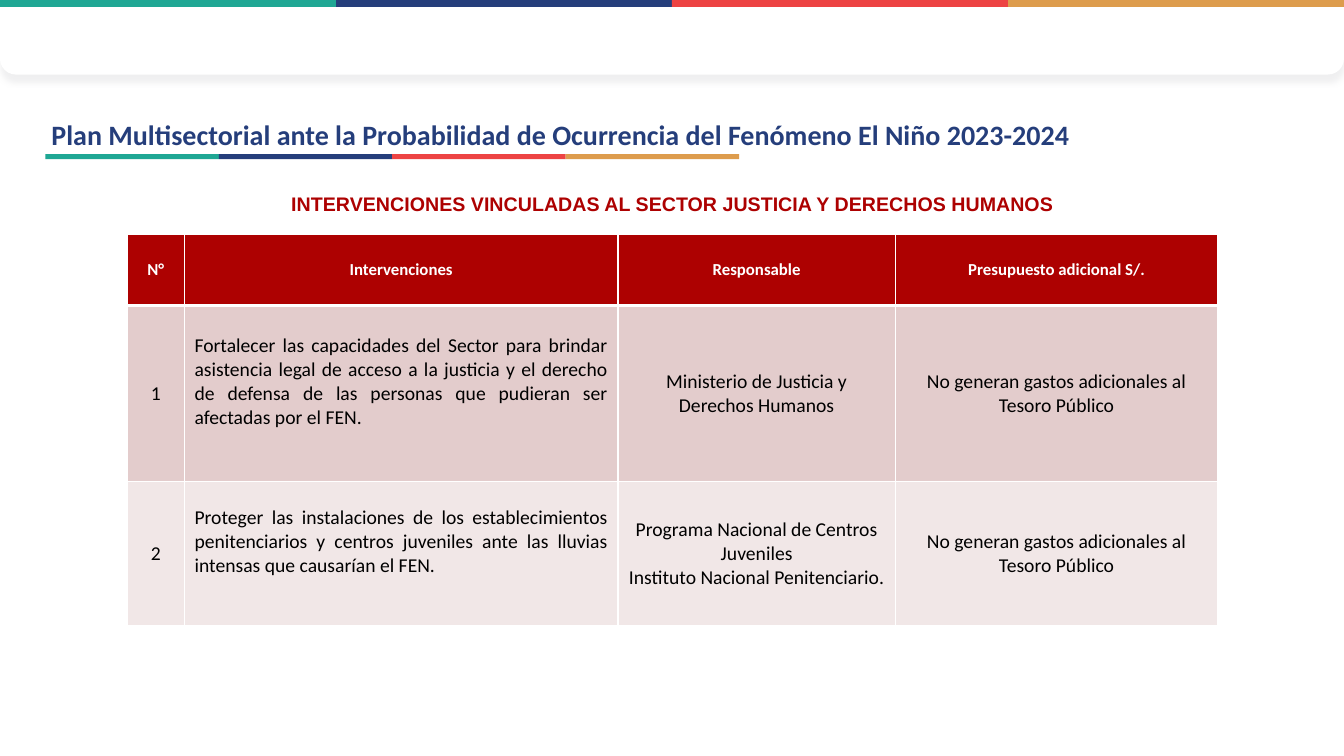
import pptx
import pptx.util
import pptx.dml.color
import pptx.enum.shapes
import pptx.enum.text
import pptx.oxml
import pptx.oxml.ns

Inches, Pt = pptx.util.Inches, pptx.util.Pt
RECT = pptx.enum.shapes.MSO_SHAPE.RECTANGLE
CARD = pptx.enum.shapes.MSO_SHAPE.ROUND_2_SAME_RECTANGLE
ALIGN = pptx.enum.text.PP_ALIGN
MIDDLE = pptx.enum.text.MSO_ANCHOR.MIDDLE

TITLE = "Plan Multisectorial ante la Probabilidad de Ocurrencia del Fenómeno El Niño 2023-2024"
SUBTITLE = "INTERVENCIONES VINCULADAS AL SECTOR JUSTICIA Y DERECHOS HUMANOS"
ROWS = [
    ["N°", "Intervenciones", "Responsable", "Presupuesto adicional S/."],
    ["1",
     "Fortalecer las capacidades del Sector para brindar asistencia legal de acceso a la justicia "
     "y el derecho de defensa de las personas que pudieran ser afectadas por el FEN.",
     "Ministerio de Justicia y Derechos Humanos",
     "No generan gastos adicionales al Tesoro Público"],
    ["2",
     "Proteger las instalaciones de los establecimientos penitenciarios y centros juveniles "
     "ante las lluvias intensas que causarían el FEN.",
     "Programa Nacional de Centros Juveniles\nInstituto Nacional Penitenciario.",
     "No generan gastos adicionales al Tesoro Público"],
]
COL_WIDTHS = [0.57, 4.3, 2.75, 3.2]
ROW_HEIGHTS = [0.7, 1.75, 1.43]
COLORS = {
    "green": "1FA794", "navy": "253E7B", "red": "ED4343", "orange": "DD9C4D",
    "crimson": "AD0101", "rose": "E3CCCC", "blush": "F1E7E7",
    "white": "FFFFFF", "black": "000000", "shadow": "A5A5AA",
}
STRIPES = ["green", "navy", "red", "orange"]
ROW_FILLS = ["crimson", "rose", "blush"]
SLIDE_W = 13.33
TABLE_X, TABLE_Y = 1.26, 2.33


def rgb(name):
    return pptx.dml.color.RGBColor.from_string(COLORS[name])


def style(p, size, color, bold, font="Calibri", align=ALIGN.LEFT):
    p.alignment = align
    p.font.size = Pt(size)
    p.font.name = font
    p.font.bold = bold
    p.font.color.rgb = rgb(color)


def add_block(slide, kind, x, y, w, h, color):
    sp = slide.shapes.add_shape(kind, Inches(x), Inches(y), Inches(w), Inches(h))
    sp.shadow.inherit = False
    sp.fill.solid()
    sp.fill.fore_color.rgb = rgb(color)
    sp.line.fill.background()
    return sp


def add_stripes(slide, x, y, w, h):
    for i, color in enumerate(STRIPES):
        add_block(slide, RECT, x + i * w, y, w, h, color)


def add_header(slide):
    card = add_block(slide, CARD, 0, 0, SLIDE_W, 0.74, "white")
    card.adjustments[0] = 0
    card.adjustments[1] = 0.214
    card.rotation = 0
    effects = card._element.spPr.find(pptx.oxml.ns.qn("a:effectLst"))
    effects.append(pptx.oxml.parse_xml(
        f'<a:outerShdw {pptx.oxml.ns.nsdecls("a")} blurRad="{Pt(4)}" dist="{Pt(5)}" '
        f'dir="5400000" algn="t" rotWithShape="0"><a:srgbClr val="{COLORS["shadow"]}">'
        '<a:alpha val="17000"/></a:srgbClr></a:outerShdw>'))
    add_stripes(slide, 0, 0, SLIDE_W / 4, 0.07)
    add_stripes(slide, 0.45, 1.53, 1.72, 0.05)


def set_borders(cell, top, bottom):
    tc_pr = cell._tc.get_or_add_tcPr()
    for i, (side, width) in enumerate([("L", 1), ("R", 1), ("T", top), ("B", bottom)]):
        tc_pr.insert(i, pptx.oxml.parse_xml(
            f'<a:ln{side} {pptx.oxml.ns.nsdecls("a")} w="{Pt(width)}"><a:solidFill>'
            f'<a:srgbClr val="{COLORS["white"]}"/></a:solidFill></a:ln{side}>'))


def add_plan_table(slide):
    table = slide.shapes.add_table(
        len(ROWS), len(COL_WIDTHS), Inches(TABLE_X), Inches(TABLE_Y),
        Inches(sum(COL_WIDTHS)), Inches(sum(ROW_HEIGHTS))).table
    for col, width in zip(table.columns, COL_WIDTHS):
        col.width = Inches(width)
    for r, (texts, height) in enumerate(zip(ROWS, ROW_HEIGHTS)):
        table.rows[r].height = Inches(height)
        head = r == 0
        for c, text in enumerate(texts):
            cell = table.cell(r, c)
            cell.fill.solid()
            cell.fill.fore_color.rgb = rgb(ROW_FILLS[r])
            set_borders(cell, 3 if r == 1 else 1, 3 if head else 1)
            cell.vertical_anchor = MIDDLE
            cell.text = text
            justified = c == 1 and not head
            if justified:
                cell.margin_bottom = Inches(0.29)
            for p in cell.text_frame.paragraphs:
                style(p, 12 if head else 14, "white" if head else "black", head,
                      align=ALIGN.JUSTIFY if justified else ALIGN.CENTER)


def main():
    prs = pptx.Presentation()
    prs.slide_width, prs.slide_height = Inches(SLIDE_W), Inches(7.5)
    slide = prs.slides.add_slide(prs.slide_layouts[5])
    add_header(slide)

    title = slide.shapes.title
    title.left, title.top, title.width, title.height = map(Inches, (0.41, 1.13, 12.51, 0.45))
    tf = title.text_frame
    tf.text = TITLE
    tf.vertical_anchor = MIDDLE
    tf.auto_size = pptx.enum.text.MSO_AUTO_SIZE.NONE
    tf.paragraphs[0].line_spacing = 0.9
    style(tf.paragraphs[0], 20, "navy", True)

    box = slide.shapes.add_textbox(
        Inches(TABLE_X), Inches(1.86), Inches(sum(COL_WIDTHS)), Inches(0.34))
    tf = box.text_frame
    tf.word_wrap = True
    tf.auto_size = pptx.enum.text.MSO_AUTO_SIZE.SHAPE_TO_FIT_TEXT
    tf.text = SUBTITLE
    style(tf.paragraphs[0], 14, "crimson", True, "Arial", ALIGN.CENTER)

    add_plan_table(slide)
    prs.save("out.pptx")


if __name__ == "__main__":
    main()
